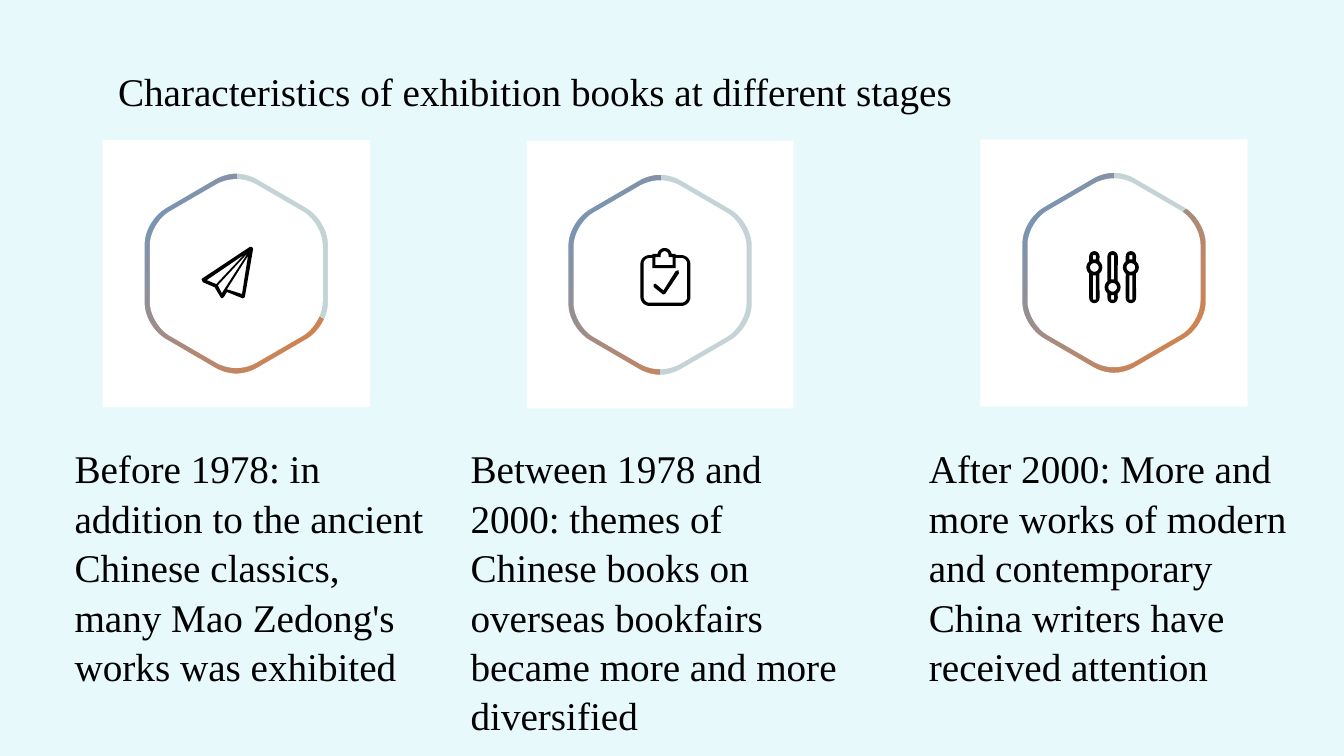
from math import cos, radians, sin

from pptx import Presentation
from pptx import util as u
from pptx.dml.color import RGBColor
from pptx.enum import shapes, text
from pptx.oxml import parse_xml
from pptx.oxml.ns import nsdecls

PALE_BLUE = RGBColor(0xE7, 0xF9, 0xFB)
WHITE = RGBColor(0xFF, 0xFF, 0xFF)
BLACK = RGBColor(0x00, 0x00, 0x00)
BLUE = RGBColor(0x5B, 0x9B, 0xD5)
ORANGE = RGBColor(0xED, 0x7D, 0x31)

FONT_FORMAT = {"name": "Times New Roman", "size": u.Pt(28), "bold": False}
FRAME_SIZE = 6.73


# Outlines: clockwise lists of points in cm
def arc(x, y, radius, start, end, steps=12):
    angles = [radians(start + (end - start) * i / steps) for i in range(steps + 1)]
    return [(x + radius * cos(a), y + radius * sin(a)) for a in angles]


def bezier(start, control_1, control_2, end, steps=10):
    points = []
    for i in range(steps + 1):
        t = i / steps
        weights = ((1 - t) ** 3, 3 * t * (1 - t) ** 2, 3 * t * t * (1 - t), t ** 3)
        curve = (start, control_1, control_2, end)
        points.append(tuple(sum(w * p[axis] for w, p in zip(weights, curve))
                            for axis in (0, 1)))
    return points


def rounded_hexagon(top_curve, side_curve):
    """Mirror the upper right quarter around the middle of the frame."""
    quarter = bezier(*top_curve) + bezier(*side_curve)
    right = quarter + [(x, -y) for x, y in reversed(quarter)]
    whole = right + [(-x, y) for x, y in reversed(right)]
    return [(FRAME_SIZE / 2 + x, FRAME_SIZE / 2 + y) for x, y in whole]


def rectangle(left, top, right, bottom):
    return [(left, top), (right, top), (right, bottom), (left, bottom)]


def rounded_board(left, top, right, bottom, radius, top_edge):
    return (arc(left + radius, top + radius, radius, 180, 270) + top_edge
            + arc(right - radius, top + radius, radius, 270, 360)
            + arc(right - radius, bottom - radius, radius, 0, 90)
            + arc(left + radius, bottom - radius, radius, 90, 180))


def finish(shape, color):
    shape.shadow.inherit = False
    shape.line.fill.background()
    shape.fill.solid()
    shape.fill.fore_color.rgb = color


def draw_outline(parent, left, top, solids, holes, color):
    contours = solids + [hole[::-1] for hole in holes]
    contours = [[(u.Cm(x), u.Cm(y)) for x, y in contour] for contour in contours]
    builder = parent.build_freeform(*contours[0][0])
    builder.add_line_segments(contours[0][1:], close=True)
    for contour in contours[1:]:
        builder.move_to(*contour[0])
        builder.add_line_segments(contour[1:], close=True)
    shape = builder.convert_to_shape(u.Cm(left), u.Cm(top))
    finish(shape, color)


# Progress ring: a disc and a pie seen through a hexagonal slit
def add_progress_ring(slide, left, top, start_angle):
    parts = slide.shapes.add_group_shape().shapes

    def add_round(kind, size):
        inset = (FRAME_SIZE - size) / 2
        return parts.add_shape(kind, u.Cm(left + inset), u.Cm(top + inset - 0.06),
                               u.Cm(size), u.Cm(size))

    disc = add_round(shapes.MSO_SHAPE.OVAL, 6.32)
    finish(disc, BLACK)
    color = disc.fill._xPr.solidFill[0]
    color.append(parse_xml(f'<a:alpha {nsdecls("a")} val="15000"/>'))

    pie = add_round(shapes.MSO_SHAPE.PIE, 5.89)
    finish(pie, BLUE)
    pie.adjustments[0] = start_angle * 0.6
    pie.adjustments[1] = 270 * 0.6
    pie.fill.gradient()
    pie.fill.gradient_angle = 315
    for stop, color in zip(pie.fill.gradient_stops, (BLUE, ORANGE)):
        stop.color.rgb = color

    outer = rounded_hexagon(
        ((0, -2.52), (0.19, -2.52), (0.38, -2.46), (0.52, -2.38)),
        ((1.79, -1.64), (2.07, -1.47), (2.31, -1.09), (2.31, -0.75)))
    inner = rounded_hexagon(
        ((0, -2.38), (0.18, -2.38), (0.35, -2.33), (0.5, -2.25)),
        ((1.69, -1.56), (1.96, -1.4), (2.18, -1.02), (2.18, -0.71)))
    frame = rectangle(0, 0, FRAME_SIZE, FRAME_SIZE)
    draw_outline(parts, left, top, [frame, inner], [outer], WHITE)


# Icons, placed relative to the frame
def add_paper_plane(slide, left, top):
    outline = [(0, 0.81), (1.22, 0), (1.27, 0), (1.3, 0.05), (1.09, 1.27),
               (1.04, 1.3), (0.64, 1.14), (0.56, 1.27), (0.51, 1.3),
               (0.48, 1.27), (0.33, 1.02), (0.03, 0.89)]
    folds = [[(1.02, 1.19), (0.64, 1.07), (1.17, 0.23)],
             [(0.41, 0.97), (1.17, 0.15), (0.51, 1.17)],
             [(0.13, 0.84), (1.07, 0.2), (0.37, 0.94)]]
    draw_outline(slide.shapes, left + 2.49, top + 2.69, [outline], folds, BLACK)


def add_clipboard(slide, left, top):
    clip = ([(0.3, 0.18), (0.3, 0.15), (0.43, 0.15)]
            + arc(0.61, 0.18, 0.18, 190, 350)
            + [(0.79, 0.15), (0.89, 0.15), (0.89, 0.18)])
    notch = [(0.3, 0.25), (0.3, 0.51), (0.89, 0.51), (0.89, 0.25)]
    board = rounded_board(0, 0.18, 1.26, 1.46, 0.23, clip)
    paper = rounded_board(0.08, 0.25, 1.18, 1.38, 0.15, notch)
    clip_hole = ([(0.38, 0.43), (0.38, 0.23), (0.51, 0.23)]
                 + arc(0.61, 0.18, 0.1, 180, 360)
                 + [(0.71, 0.23), (0.81, 0.23), (0.81, 0.43)])
    check = [(0.33, 0.92), (0.38, 0.9), (0.58, 1.07), (0.89, 0.58), (0.96, 0.56),
             (0.97, 0.64), (0.62, 1.16), (0.57, 1.17), (0.33, 0.98)]
    draw_outline(slide.shapes, left + 2.87, top + 2.69, [board, check],
                 [paper, clip_hole], BLACK)


def add_sliders(slide, left, top):
    parts = slide.shapes.add_group_shape().shapes
    for column, knob in enumerate((0.41, 0.91, 0.41)):
        outline = (arc(0.2, 0.13, 0.13, 180, 360) + arc(0.2, knob, 0.2, -50, 50)
                   + arc(0.2, 1.18, 0.13, 0, 180) + arc(0.2, knob, 0.2, 130, 230))
        holes = [arc(0.2, knob, 0.11, 0, 345, 23),
                 rectangle(0.16, 0.1, 0.24, knob - 0.2),
                 rectangle(0.16, knob + 0.2, 0.24, 1.22)]
        draw_outline(parts, left + 2.67 + 0.46 * column, top + 2.82,
                     [outline], holes, BLACK)


# Text
def write(shape, words):
    frame = shape.text_frame
    frame.word_wrap = True
    frame.auto_size = text.MSO_AUTO_SIZE.SHAPE_TO_FIT_TEXT
    frame.vertical_anchor = text.MSO_ANCHOR.TOP
    paragraph = frame.paragraphs[0]
    paragraph.text = words
    paragraph.alignment = text.PP_ALIGN.LEFT
    paragraph.line_spacing = 1.05
    for name, value in FONT_FORMAT.items():
        setattr(paragraph.font, name, value)
    paragraph.font.color.rgb = BLACK


def add_title(slide, left, top, width, height):
    title = slide.shapes.title
    box = {"left": left, "top": top, "width": width, "height": height}
    for name, value in box.items():
        setattr(title, name, u.Cm(value))
    write(title, "Characteristics of exhibition books at different stages")


def add_description(slide, left, top, width, height, words):
    write(slide.shapes.add_textbox(*map(u.Cm, (left, top, width, height))), words)


# Stages: frame left, frame top, ring start angle, icon, text left, text width, words
STAGES = [
    (2.59, 3.53, 29.11, add_paper_plane, 1.63, 9.5,
     "Before 1978: in addition to the ancient Chinese classics, "
     "many Mao Zedong's works was exhibited"),
    (13.27, 3.56, 90.47, add_clipboard, 11.61, 10.26,
     "Between 1978 and 2000: themes of Chinese books on overseas "
     "bookfairs became more and more diversified"),
    (24.71, 3.51, 319.93, add_sliders, 23.16, 9.8,
     "After 2000: More and more works of modern and contemporary "
     "China writers have received attention"),
]


def main():
    presentation = Presentation()
    presentation.slide_width, presentation.slide_height = u.Cm(33.87), u.Cm(19.05)
    slide = presentation.slides.add_slide(presentation.slide_layouts[5])
    slide.background.fill.solid()
    slide.background.fill.fore_color.rgb = PALE_BLUE
    add_title(slide, 2.72, 1.52, 21.74, 1.45)
    for left, top, start_angle, add_icon, text_left, text_width, words in STAGES:
        add_progress_ring(slide, left, top, start_angle)
        add_icon(slide, left, top)
        add_description(slide, text_left, 11.02, text_width, 6.25, words)
    presentation.save("out.pptx")


if __name__ == "__main__":
    main()
